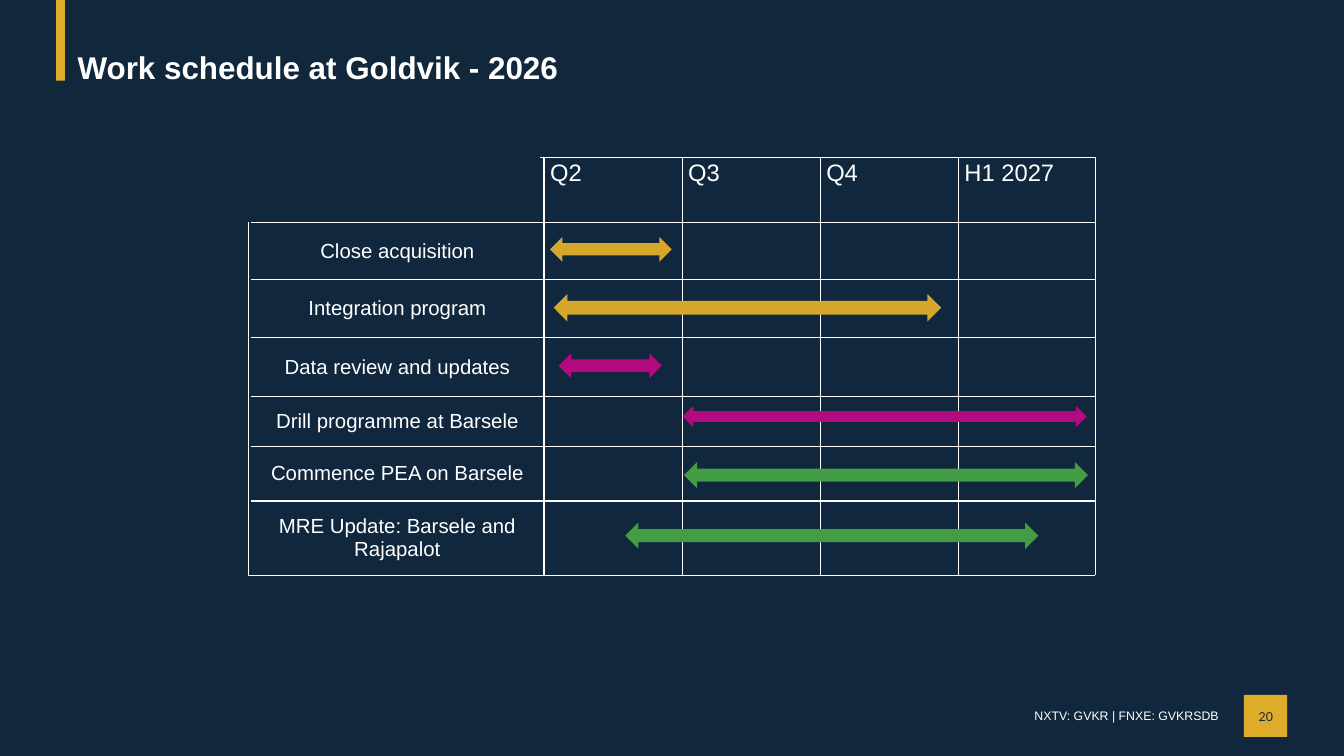
from dataclasses import dataclass

from lxml import etree
from pptx import Presentation
from pptx.dml.color import RGBColor
from pptx.enum.shapes import MSO_CONNECTOR, MSO_SHAPE
from pptx.enum.text import MSO_ANCHOR, PP_ALIGN
from pptx.oxml.ns import qn
from pptx.util import Pt

RECT, ARROW = MSO_SHAPE.RECTANGLE, MSO_SHAPE.LEFT_RIGHT_ARROW
STRAIGHT = MSO_CONNECTOR.STRAIGHT
LEFT, CENTER, RIGHT = PP_ALIGN.LEFT, PP_ALIGN.CENTER, PP_ALIGN.RIGHT
TOP, MIDDLE = MSO_ANCHOR.TOP, MSO_ANCHOR.MIDDLE

COLORS = {
    "background": "11283C",
    "navy": "10273D",
    "accent": "DEAC2A",
    "gold": "D6A72B",
    "magenta": "B40A80",
    "green": "439D45",
    "white": "FFFFFF",
}
WIDTH, HEIGHT = 1583.28, 890.64
TABLE_LEFT, TABLE_TOP = 295.2, 185.04
LABEL_WIDTH, PERIOD_WIDTH = 345.6, 162.72
HEADER_HEIGHT = 77.04
FRAME_LEFT, FRAME_RIGHT, FRAME_BOTTOM = 292.32, 1290.24, 677.52
HEADER_LEFT, TASKS_TOP = 636.48, 261.36
PERIODS = ["Q2", "Q3", "Q4", "H1 2027"]


@dataclass
class Box:
    left: float
    top: float
    width: float
    height: float
    color: str


@dataclass
class Task:
    label: str
    row_height: float
    bar: Box


@dataclass
class Line:
    x1: float
    y1: float
    x2: float
    y2: float


PANELS = [
    Box(0, 0, WIDTH, HEIGHT, "background"),
    Box(66.2, 0, 10.4, 95, "accent"),
    Box(0, 796.3, WIDTH, 94.34, "navy"),
    Box(1465.2, 818.6, 51.1, 49.7, "accent"),
]
TASKS = [
    Task("Close acquisition", 67.68, Box(648, 279.36, 143.28, 28.8, "gold")),
    Task("Integration program", 67.68, Box(652.32, 346.32, 456.48, 32.4, "gold")),
    Task("Data review and updates", 69.84, Box(658.08, 416.16, 121.68, 29.52, "magenta")),
    Task("Drill programme at Barsele", 59.04, Box(804.24, 478.08, 475.92, 25.2, "magenta")),
    Task("Commence PEA on Barsele", 64.08, Box(805.68, 544.32, 475.92, 30.96, "green")),
    Task("MRE Update: Barsele and Rajapalot", 87.12, Box(736.56, 615.6, 486.72, 30.96, "green")),
]
FRAME = [
    Line(FRAME_LEFT, TASKS_TOP, FRAME_LEFT, FRAME_BOTTOM),
    Line(FRAME_LEFT, FRAME_BOTTOM, FRAME_RIGHT, FRAME_BOTTOM),
    Line(HEADER_LEFT, TABLE_TOP, FRAME_RIGHT, TABLE_TOP),
    Line(FRAME_RIGHT, TABLE_TOP, FRAME_RIGHT, FRAME_BOTTOM),
]


def rgb(name: str) -> RGBColor:
    return RGBColor.from_string(COLORS[name])


def write(tf, text: str, *, size: float, color: str = "white", font: str = "Arial",
          bold: bool = False, align=LEFT) -> None:
    p = tf.paragraphs[0]
    p.alignment = align
    r = p.add_run()
    r.text = text
    r.font.name, r.font.size, r.font.bold = font, Pt(size), bold
    r.font.color.rgb = rgb(color)


def add_text(s, text: str, left: float, top: float, width: float, height: float,
             **style) -> None:
    tf = s.shapes.add_textbox(Pt(left), Pt(top), Pt(width), Pt(height)).text_frame
    tf.word_wrap = True
    tf.margin_left = tf.margin_right = tf.margin_top = tf.margin_bottom = 0
    write(tf, text, **style)


def add_box(s, box: Box, kind) -> None:
    sp = s.shapes.add_shape(kind, Pt(box.left), Pt(box.top), Pt(box.width), Pt(box.height))
    sp.shadow.inherit = False
    sp.fill.solid()
    sp.fill.fore_color.rgb = rgb(box.color)
    sp.line.fill.background()


def add_line(s, line: Line) -> None:
    cx = s.shapes.add_connector(STRAIGHT, Pt(line.x1), Pt(line.y1), Pt(line.x2), Pt(line.y2))
    cx.line.color.rgb = rgb("white")
    cx.line.width = Pt(1)
    etree.SubElement(cx.element.spPr, qn("a:effectLst"))


def set_borders(cell, shown: dict[str, bool]) -> None:
    tc_pr = cell._tc.get_or_add_tcPr()
    for side, visible in shown.items():
        ln = etree.SubElement(tc_pr, qn(f"a:ln{side}"), w=str(Pt(1.5)))
        if visible:
            fill = etree.SubElement(ln, qn("a:solidFill"))
            etree.SubElement(fill, qn("a:srgbClr"), val=COLORS["white"])
        else:
            etree.SubElement(ln, qn("a:noFill"))


def add_schedule(s) -> None:
    heights = [HEADER_HEIGHT] + [task.row_height for task in TASKS]
    widths = [LABEL_WIDTH] + [PERIOD_WIDTH] * len(PERIODS)
    table = s.shapes.add_table(len(heights), len(widths), Pt(TABLE_LEFT), Pt(TABLE_TOP),
                               Pt(sum(widths)), Pt(sum(heights))).table
    table.first_row = table.horz_banding = False
    for column, width in zip(table.columns, widths):
        column.width = Pt(width)
    for row, height in zip(table.rows, heights):
        row.height = Pt(height)
    last_row, last_col = len(heights) - 1, len(widths) - 1
    for i, row in enumerate(table.rows):
        for j, cell in enumerate(row.cells):
            set_borders(cell, {"L": j > 0, "R": j < last_col, "T": i > 0, "B": i < last_row})
            if i == j == 0:
                cell.fill.background()
                continue
            cell.fill.solid()
            cell.fill.fore_color.rgb = rgb("navy")
            cell.vertical_anchor = TOP if i == 0 else MIDDLE
            if i == 0:
                write(cell.text_frame, PERIODS[j - 1], size=28)
            elif j == 0:
                write(cell.text_frame, TASKS[i - 1].label, size=24, align=CENTER)


def main() -> None:
    prs = Presentation()
    prs.slide_width, prs.slide_height = Pt(WIDTH), Pt(HEIGHT)
    s = prs.slides.add_slide(prs.slide_layouts[6])
    for panel in PANELS:
        add_box(s, panel, RECT)
    add_text(s, "NXTV: GVKR | FNXE: GVKRSDB", 1113.84, 834.5, 321.84, 20,
             size=14.5, align=RIGHT)
    add_text(s, "Work schedule at Goldvik - 2026", 91.44, 56.88, 1425.6, 44.64,
             size=37, bold=True)
    add_text(s, "20", 1476, 835.92, 30.24, 17.28,
             size=14.5, color="navy", font="Lato", align=CENTER)
    add_schedule(s)
    for task in TASKS:
        add_box(s, task.bar, ARROW)
    for line in FRAME:
        add_line(s, line)
    prs.save("out.pptx")


if __name__ == "__main__":
    main()
